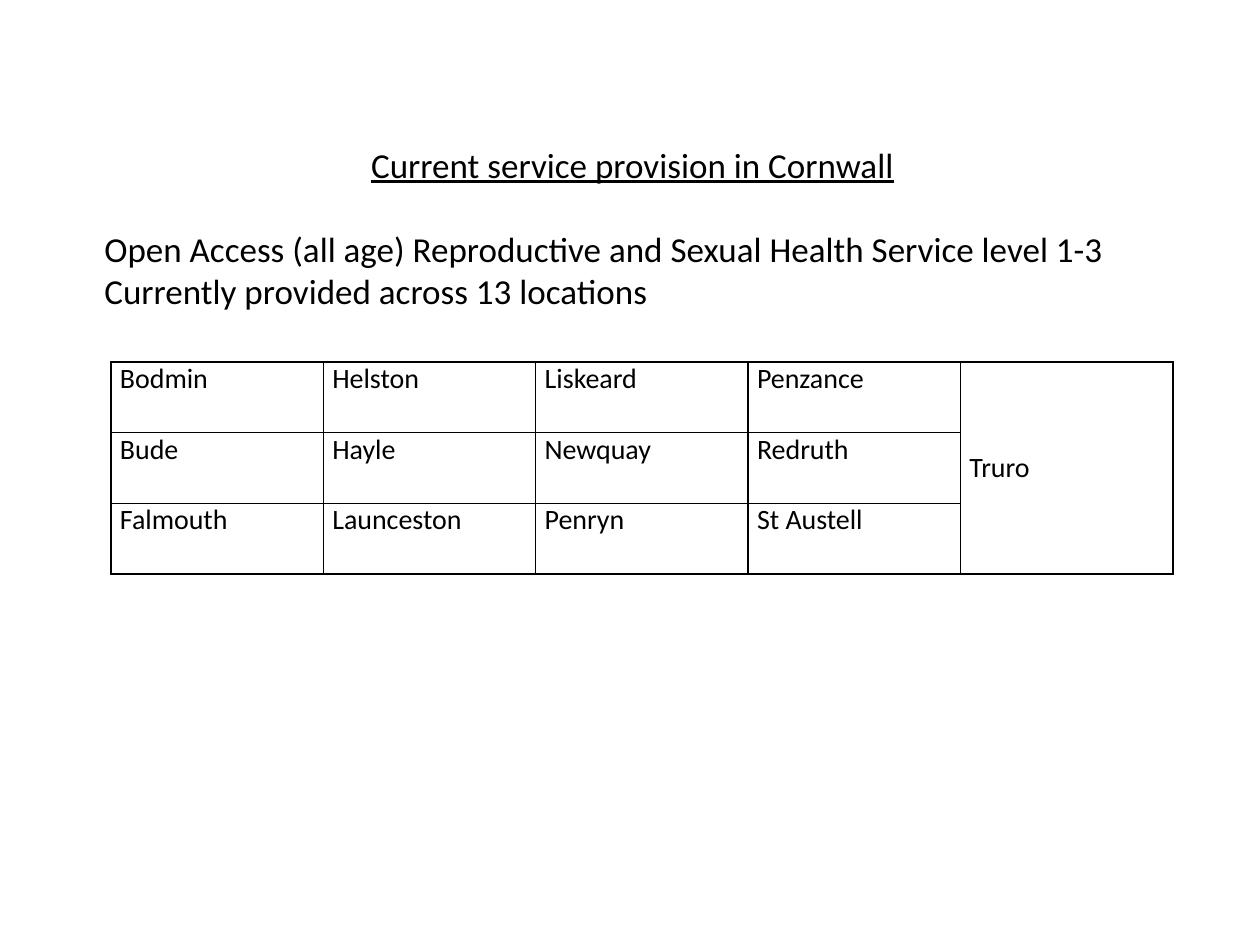
from lxml.etree import SubElement
from pptx import Presentation
from pptx.dml.color import RGBColor
from pptx.enum.text import MSO_ANCHOR, PP_ALIGN
from pptx.oxml.ns import qn
from pptx.util import Emu, Pt

BLACK = RGBColor(0, 0, 0)
FONT = "Calibri"


def px(length):
    return Emu(round(length * 914400 / 126))


def add_run(paragraph, text, size, underline=False):
    run = paragraph.add_run()
    run.text = text
    run.font.name = FONT
    run.font.size = Pt(size)
    run.font.color.rgb = BLACK
    run.font.underline = underline


prs = Presentation()
prs.slide_width, prs.slide_height = px(1260), px(945)
slide = prs.slides.add_slide(prs.slide_layouts[6])

# Heading and introduction
intro = slide.shapes.add_textbox(px(92), px(137), px(1081), px(224)).text_frame
intro.word_wrap = True
heading = intro.paragraphs[0]
heading.alignment = PP_ALIGN.CENTER
add_run(heading, "Current service provision in Cornwall", 20, underline=True)

service = intro.add_paragraph()
service.space_before = Pt(24)
add_run(service, "Open Access (all age) Reproductive and Sexual Health Service level 1-3", 20)
add_run(intro.add_paragraph(), "Currently provided across 13 locations", 20)

# Table of locations; the last column is one merged cell
LOCATIONS = [
    ["Bodmin", "Helston", "Liskeard", "Penzance", "Truro"],
    ["Bude", "Hayle", "Newquay", "Redruth"],
    ["Falmouth", "Launceston", "Penryn", "St Austell"],
]
locations = slide.shapes.add_table(3, 5, px(111), px(362), px(1062), px(212)).table
locations.first_row = locations.horz_banding = False
locations.cell(0, 4).merge(locations.cell(2, 4))
locations.cell(0, 4).vertical_anchor = MSO_ANCHOR.MIDDLE

for row, towns in enumerate(LOCATIONS):
    for column, town in enumerate(towns):
        add_run(locations.cell(row, column).text_frame.paragraphs[0], town, 16)

# Cell margins, borders and empty fill
for cell in locations.iter_cells():
    cell.margin_left = cell.margin_right = px(9)
    cell.margin_top = cell.margin_bottom = 0
    properties = cell._tc.get_or_add_tcPr()
    for side in ("a:lnL", "a:lnR", "a:lnT", "a:lnB"):
        border = SubElement(properties, qn(side), w=str(Pt(1)))
        border_fill = SubElement(border, qn("a:solidFill"))
        SubElement(border_fill, qn("a:srgbClr"), val=str(BLACK))
    cell.fill.background()

prs.save("out.pptx")
